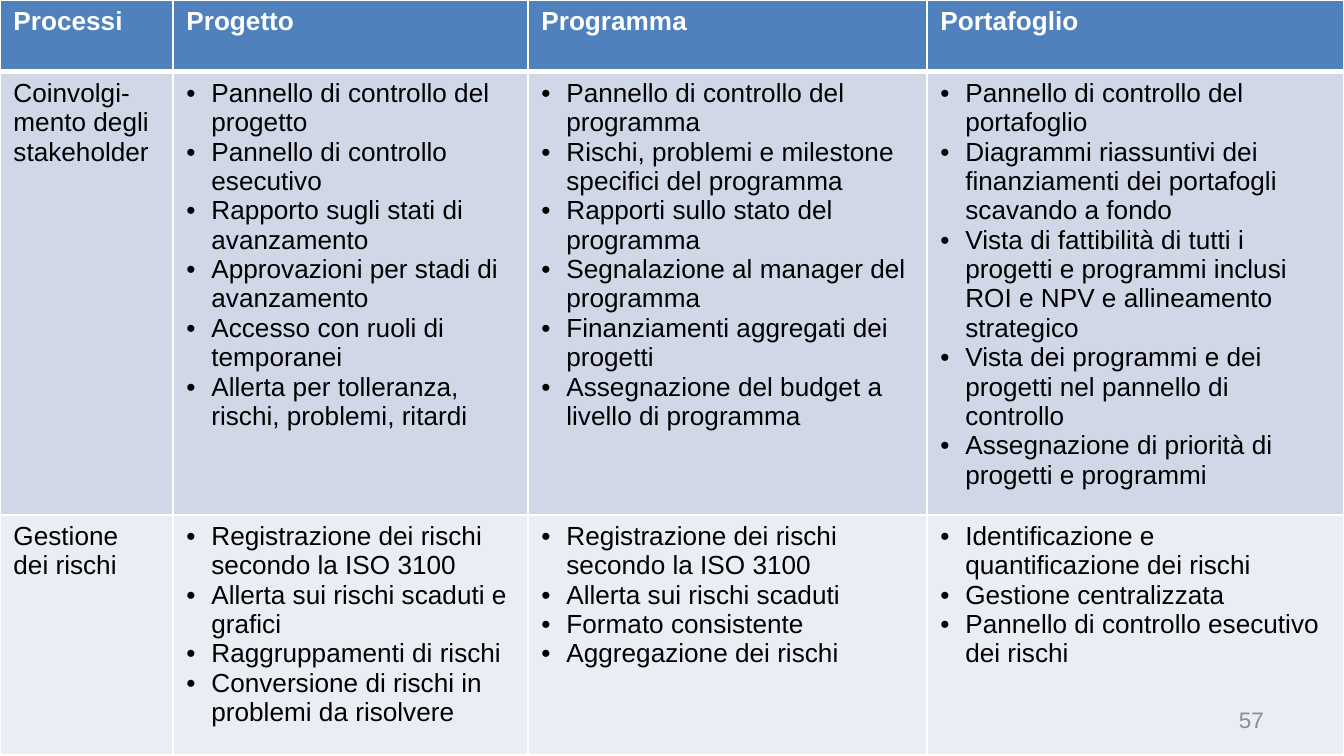
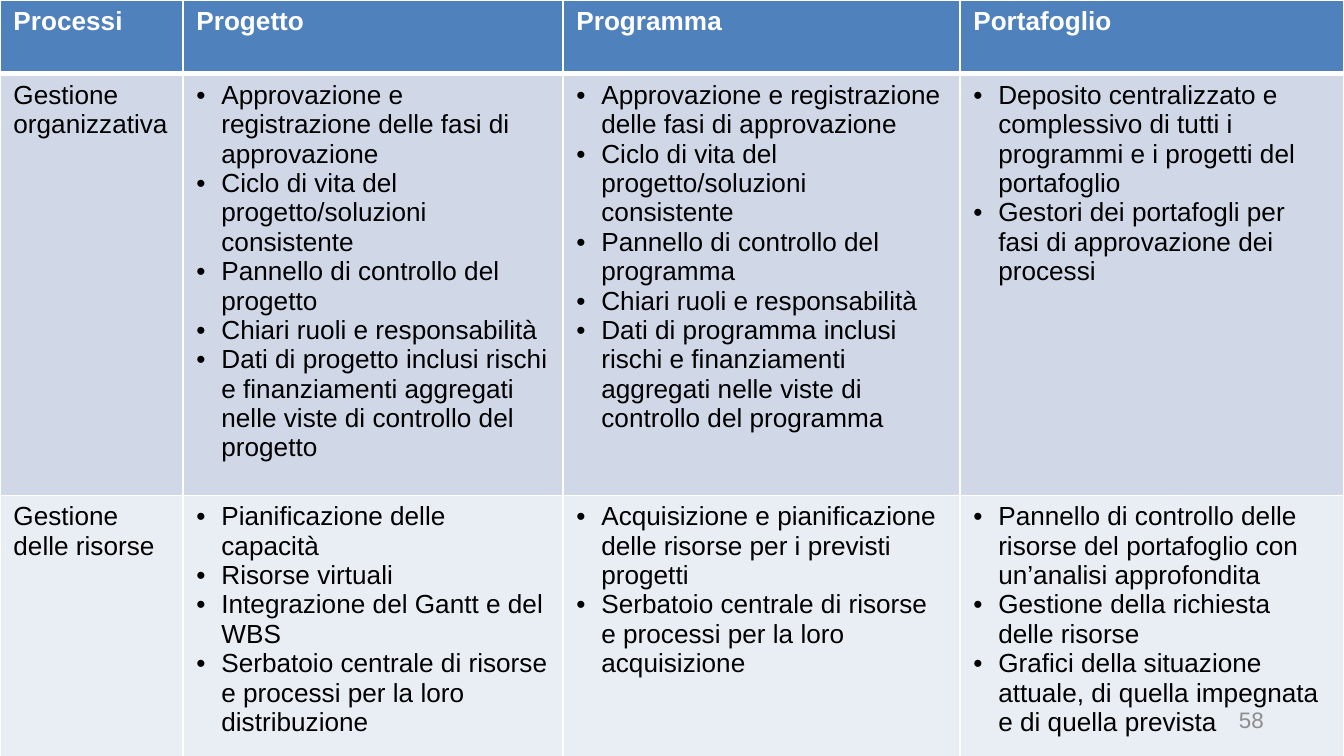
from lxml import etree
from pptx import Presentation
from pptx.dml.color import RGBColor
from pptx.enum.text import MSO_ANCHOR, PP_ALIGN
from pptx.oxml.ns import qn
from pptx.util import Pt

MIDDLE = MSO_ANCHOR.MIDDLE
RIGHT = PP_ALIGN.RIGHT
SLIDE_WIDTH, SLIDE_HEIGHT = 1344, 756
EMU_PER_PX = 9144000 / SLIDE_WIDTH
FONT = "Arial"
BULLET_INDENT = 25
THIN, THICK = 1, 3
COLORS = {
    "header": "4F81BD",
    "band_dark": "D0D8E8",
    "band_light": "E9EDF4",
    "border": "FFFFFF",
    "header_text": "FFFFFF",
    "body_text": "000000",
    "page_number": "8C8C8C",
}
ROW_FILLS = ["header", "band_dark", "band_light"]
HEADERS = ["Processi", "Progetto", "Programma", "Portafoglio"]
NUMBER_BOX = (1196, 700, 81, 40)

PAGES = [
    {
        "number": "57",
        "columns": [173, 355, 399, 417],
        "rows": [72, 443, 240],
        "processes": [
            ["Coinvolgi-mento degli stakeholder",
             ["Pannello di controllo del progetto",
              "Pannello di controllo esecutivo",
              "Rapporto sugli stati di avanzamento",
              "Approvazioni per stadi di avanzamento",
              "Accesso con ruoli di temporanei",
              "Allerta per tolleranza, rischi, problemi, ritardi"],
             ["Pannello di controllo del programma",
              "Rischi, problemi e milestone specifici del programma",
              "Rapporti sullo stato del programma",
              "Segnalazione al manager del programma",
              "Finanziamenti aggregati dei progetti",
              "Assegnazione del budget a livello di programma"],
             ["Pannello di controllo del portafoglio",
              "Diagrammi riassuntivi dei finanziamenti dei portafogli scavando a fondo",
              "Vista di fattibilità di tutti i progetti e programmi inclusi ROI e NPV "
              "e allineamento strategico",
              "Vista dei programmi e dei progetti nel pannello di controllo",
              "Assegnazione di priorità di progetti e programmi"]],
            ["Gestione dei rischi",
             ["Registrazione dei rischi secondo la ISO 3100",
              "Allerta sui rischi scaduti e grafici",
              "Raggruppamenti di rischi",
              "Conversione di rischi in problemi da risolvere"],
             ["Registrazione dei rischi secondo la ISO 3100",
              "Allerta sui rischi scaduti",
              "Formato consistente",
              "Aggregazione dei rischi"],
             ["Identificazione e quantificazione dei rischi",
              "Gestione centralizzata",
              "Pannello di controllo esecutivo dei rischi"]],
        ],
    },
    {
        "number": "58",
        "columns": [183, 380, 397, 384],
        "rows": [74, 395, 248],
        "processes": [
            ["Gestione organizzativa",
             ["Approvazione e registrazione delle fasi di approvazione",
              "Ciclo di vita del progetto/soluzioni consistente",
              "Pannello di controllo del progetto",
              "Chiari ruoli e responsabilità",
              "Dati di progetto inclusi rischi e finanziamenti aggregati nelle viste "
              "di controllo del progetto"],
             ["Approvazione e registrazione delle fasi di approvazione",
              "Ciclo di vita del progetto/soluzioni consistente",
              "Pannello di controllo del programma",
              "Chiari ruoli e responsabilità",
              "Dati di programma inclusi rischi e finanziamenti aggregati nelle viste "
              "di controllo del programma"],
             ["Deposito centralizzato e complessivo di tutti i programmi e i progetti "
              "del portafoglio",
              "Gestori dei portafogli per fasi di approvazione dei processi"]],
            ["Gestione delle risorse",
             ["Pianificazione delle capacità",
              "Risorse virtuali",
              "Integrazione del Gantt e del WBS",
              "Serbatoio centrale di risorse e processi per la loro distribuzione"],
             ["Acquisizione e pianificazione delle risorse per i previsti progetti",
              "Serbatoio centrale di risorse e processi per la loro acquisizione"],
             ["Pannello di controllo delle risorse del portafoglio con un’analisi "
              "approfondita",
              "Gestione della richiesta delle risorse",
              "Grafici della situazione attuale, di quella impegnata e di quella "
              "prevista"]],
        ],
    },
]


def px(length):
    """Turn a length in px into EMU."""
    return round(length * EMU_PER_PX)


def style_font(para, size, color, bold=False):
    """Set the font of a whole paragraph."""
    font = para.font
    font.name, font.size, font.bold = FONT, Pt(size), bold
    font.color.rgb = RGBColor.from_string(COLORS[color])


def add_bullet(para):
    """Give a paragraph a hanging round bullet."""
    properties = para._p.get_or_add_pPr()
    properties.set("marL", str(px(BULLET_INDENT)))
    properties.set("indent", str(-px(BULLET_INDENT)))
    etree.SubElement(properties, qn("a:buFont"), typeface=FONT)
    etree.SubElement(properties, qn("a:buChar"), char="•")


def set_borders(cell, top, bottom):
    """Draw the four borders of a cell, with the given top and bottom widths."""
    properties = cell._tc.get_or_add_tcPr()
    for side, width in (("L", THIN), ("R", THIN), ("T", top), ("B", bottom)):
        line = etree.SubElement(properties, qn(f"a:ln{side}"), w=str(Pt(width)))
        fill = etree.SubElement(line, qn("a:solidFill"))
        etree.SubElement(fill, qn("a:srgbClr"), val=COLORS["border"])


def fill_cell(cell, content, row):
    """Write one table cell: a plain label or a list of bullets."""
    is_header = row == 0
    set_borders(cell, THICK if row == 1 else THIN, THICK if is_header else THIN)
    cell.fill.solid()
    cell.fill.fore_color.rgb = RGBColor.from_string(COLORS[ROW_FILLS[row]])
    is_list = isinstance(content, list)
    cell.text_frame.text = "\n".join(content) if is_list else content
    for para in cell.text_frame.paragraphs:
        if is_list:
            add_bullet(para)
        style_font(para, 14, "header_text" if is_header else "body_text", is_header)


def add_process_table(page, left, top, columns, rows, processes):
    """Place the process table with its header row."""
    lines = [HEADERS, *processes]
    table = page.shapes.add_table(
        len(rows), len(columns), px(left), px(top), px(sum(columns)), px(sum(rows))
    ).table
    for column, width in zip(table.columns, columns):
        column.width = px(width)
    for row, height in zip(table.rows, rows):
        row.height = px(height)
    for row, line in enumerate(lines):
        for column, content in enumerate(line):
            fill_cell(table.cell(row, column), content, row)


def add_page_number(page, bounds, number):
    """Place the page number, right aligned in its box."""
    frame = page.shapes.add_textbox(*map(px, bounds)).text_frame
    frame.word_wrap = True
    frame.vertical_anchor = MIDDLE
    frame.text = number
    para = frame.paragraphs[0]
    para.alignment = RIGHT
    style_font(para, 12, "page_number")


def main():
    """Build the deck and save it."""
    deck = Presentation()
    deck.slide_width, deck.slide_height = px(SLIDE_WIDTH), px(SLIDE_HEIGHT)
    for content in PAGES:
        page = deck.slides.add_slide(deck.slide_layouts[6])
        add_process_table(page, 0, 0, content["columns"], content["rows"],
                          content["processes"])
        add_page_number(page, NUMBER_BOX, content["number"])
    deck.save("out.pptx")


if __name__ == "__main__":
    main()
